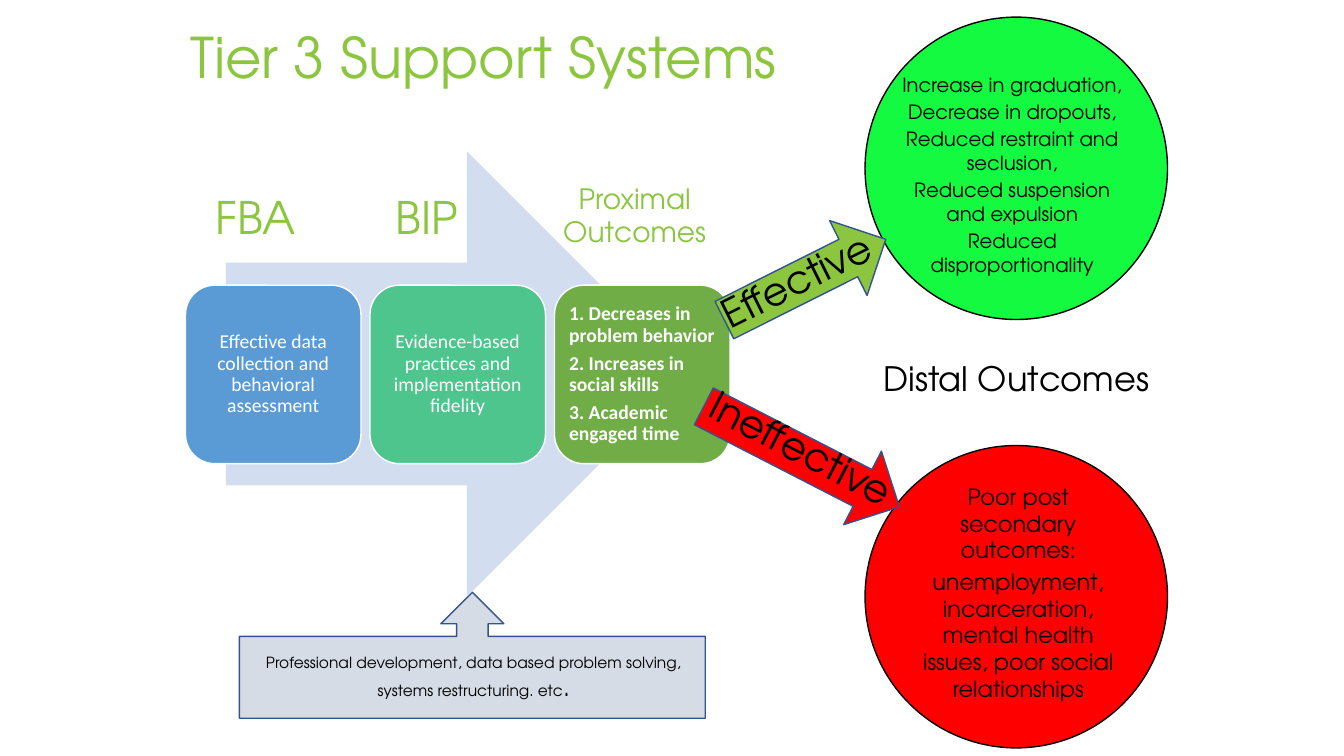
from dataclasses import dataclass

from pptx import Presentation
from pptx import util as u
from pptx.dml.color import RGBColor
from pptx.enum import shapes, text

Inches = u.Inches
Shape = shapes.MSO_SHAPE
Align = text.PP_ALIGN


@dataclass(frozen=True)
class Theme:
    """Colours, fonts and type sizes of the slide."""
    heading_font: str = "TeX Gyre Adventor"
    stage_font: str = "Calibri"
    green: str = "8CC63F"
    black: str = "000000"
    white: str = "FFFFFF"
    outline: str = "325491"
    support: str = "D6DCE5"
    process: str = "D2DEEF"
    assessment: str = "5B9BD5"
    practice: str = "4DC58D"
    proximal: str = "70AD47"
    success: str = "14FA40"
    failure: str = "FF0000"
    title: int = 40
    stage_title: int = 32
    path_label: int = 28
    distal: int = 24
    subtitle: int = 20
    full_stop: int = 18
    poor: int = 16
    body: int = 14
    note: int = 11


THEME = Theme()


def add_figure(slide, preset, box, fill, line=None, rotation=0):
    """Draw a filled preset shape, outlined if a line colour is given."""
    figure = slide.shapes.add_shape(preset, *map(Inches, box))
    figure.shadow.inherit = False
    figure.rotation = rotation
    figure.fill.solid()
    figure.fill.fore_color.rgb = RGBColor.from_string(fill)
    if line:
        figure.line.color.rgb = RGBColor.from_string(line)
        figure.line.width = u.Pt(1)
    else:
        figure.line.fill.background()
    return figure


def add_run(paragraph, words, size, font, color, bold=False):
    """Append one formatted run to a paragraph."""
    run = paragraph.add_run()
    run.text = words
    run.font.size = u.Pt(size)
    run.font.name = font
    run.font.bold = bold
    run.font.color.rgb = RGBColor.from_string(color)


def paragraphs(frame, count):
    """Return the given number of paragraphs in a fresh text frame."""
    return [frame.paragraphs[0]] + [frame.add_paragraph() for _ in range(count - 1)]


def add_label(slide, box, lines, size, color=THEME.black, wrap=True, rotation=0):
    """Write centred lines in a text box."""
    label = slide.shapes.add_textbox(*map(Inches, box))
    label.rotation = rotation
    frame = label.text_frame
    frame.word_wrap = wrap
    frame.auto_size = text.MSO_AUTO_SIZE.SHAPE_TO_FIT_TEXT
    for paragraph, words in zip(paragraphs(frame, len(lines)), lines):
        paragraph.alignment = Align.CENTER
        paragraph.space_before = u.Pt(size * 0.2)
        add_run(paragraph, words, size, THEME.heading_font, color)


def add_stage(slide, column, fill, lines, alignment=Align.CENTER, bold=False):
    """Draw one rounded stage card in its column."""
    card = add_figure(slide, Shape.ROUNDED_RECTANGLE,
                      (1.84 + column * 1.83, 2.83, 1.74, 1.77), fill, THEME.white)
    frame = card.text_frame
    frame.word_wrap = True
    frame.vertical_anchor = text.MSO_ANCHOR.MIDDLE
    frame.margin_left = frame.margin_right = Inches(0.06)
    frame.margin_top = frame.margin_bottom = Inches(0.06)
    for paragraph, words in zip(paragraphs(frame, len(lines)), lines):
        paragraph.alignment = alignment
        paragraph.line_spacing = 0.9
        paragraph.space_after = u.Pt(THEME.body * 0.35)
        add_run(paragraph, words, THEME.body, THEME.stage_font, THEME.white, bold)


def add_support_note(slide):
    """Write the note inside the upward callout."""
    note = slide.shapes.add_textbox(*map(Inches, (2.52, 6.43, 4.36, 0.59)))
    note.text_frame.word_wrap = True
    paragraph = note.text_frame.paragraphs[0]
    paragraph.alignment = Align.CENTER
    for words, size in (
        ("Professional development, data based problem solving, systems restructuring. etc",
         THEME.note),
        (".", THEME.full_stop),
    ):
        add_run(paragraph, words, size, THEME.heading_font, THEME.black)


def add_process(slide):
    """Draw the support callout, the process arrow and its three stages."""
    add_figure(slide, Shape.RIGHT_ARROW_CALLOUT, (4.06, 4.19, 1.25, 4.62),
               THEME.support, THEME.outline, 270)
    add_figure(slide, Shape.RIGHT_ARROW, (2.24, 1.5, 4.6, 4.42), THEME.process)
    add_stage(slide, 0, THEME.assessment,
              ["Effective data collection and behavioral assessment"])
    add_stage(slide, 1, THEME.practice,
              ["Evidence-based practices and implementation fidelity"])
    add_stage(slide, 2, THEME.proximal,
              ["1. Decreases in problem behavior", "2. Increases in social skills",
               "3. Academic engaged time"], Align.LEFT, True)
    add_label(slide, (2.03, 1.83, 1.01, 0.64), ["FBA"], THEME.stage_title, THEME.green, False)
    add_label(slide, (3.82, 1.83, 0.83, 0.64), ["BIP"], THEME.stage_title, THEME.green, False)
    add_label(slide, (5.42, 1.75, 1.75, 0.77), ["Proximal Outcomes"],
              THEME.subtitle, THEME.green)


def add_outcomes(slide):
    """Draw the distal outcome circles and the arrows leading to them."""
    for top, fill in ((0.17, THEME.success), (4.42, THEME.failure)):
        add_figure(slide, Shape.OVAL, (8.58, top, 3, 3), fill, THEME.black)
    add_label(slide, (8.98, 4.74, 2.24, 2.31),
              ["Poor post secondary outcomes:",
               "unemployment, incarceration, mental health issues, poor social relationships"],
              THEME.poor)
    add_label(slide, (8.83, 0.67, 2.42, 2.74),
              ["Increase in graduation,", "Decrease in dropouts,",
               "Reduced restraint and seclusion,", "Reduced suspension and expulsion",
               "Reduced disproportionality"], THEME.body)
    add_label(slide, (8.65, 3.5, 2.86, 0.5), ["Distal Outcomes"], THEME.distal, wrap=False)
    add_figure(slide, Shape.RIGHT_ARROW, (7.09, 2.36, 1.79, 0.83),
               THEME.green, THEME.outline, 333.4)
    add_figure(slide, Shape.RIGHT_ARROW, (6.86, 4.12, 2.18, 0.82),
               THEME.failure, THEME.outline, 27.2)
    add_label(slide, (6.77, 4.16, 2.36, 0.57), ["Ineffective"], THEME.path_label, rotation=27.4)
    add_label(slide, (6.97, 2.49, 1.85, 0.57), ["Effective"], THEME.path_label,
              wrap=False, rotation=333.5)


def main():
    """Build and save the slide."""
    deck = Presentation()
    deck.slide_width, deck.slide_height = Inches(13.33), Inches(7.5)
    slide = deck.slides.add_slide(deck.slide_layouts[6])
    add_process(slide)
    add_outcomes(slide)
    add_label(slide, (1.67, 0.17, 6.25, 0.77), ["Tier 3 Support Systems"],
              THEME.title, THEME.green)
    add_support_note(slide)
    deck.save("out.pptx")


if __name__ == "__main__":
    main()
